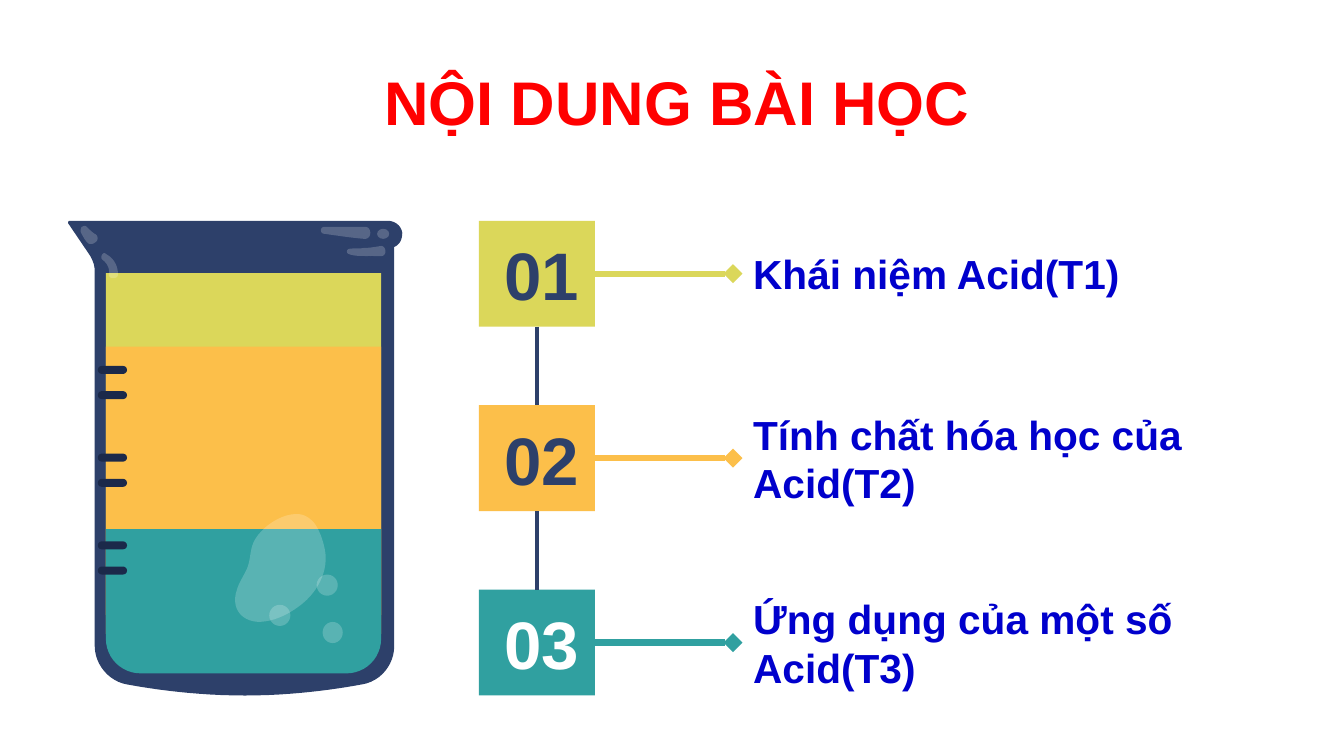
from dataclasses import dataclass

from lxml.etree import SubElement
from pptx import Presentation
from pptx.dml.color import RGBColor
from pptx.enum.shapes import MSO_CONNECTOR, MSO_SHAPE
from pptx.enum.text import MSO_ANCHOR, MSO_AUTO_SIZE, PP_ALIGN
from pptx.oxml.ns import qn
from pptx.shapes.autoshape import Shape
from pptx.shapes.connector import Connector
from pptx.slide import Slide
from pptx.util import Inches, Pt

NAVY, DARK_NAVY, WHITE = "2D406A", "1B294A", "FFFFFF"
LIME, AMBER, TEAL = "DBD75A", "FCBF4A", "30A0A0"
RED, BLUE = "FF0000", "0000CC"
FONT = "Arial"
CURVE_STEPS = 12
ROW_TOP, ROW_PITCH = 2.19, 1.83
SQUARE_LEFT, SQUARE_WIDTH, SQUARE_HEIGHT = 4.75, 1.15, 1.05
LABEL_LEFT, LABEL_HEIGHT = 7.27, 0.88
GLARE_OPACITY = 20

Point = tuple[float, float]


@dataclass
class Lesson:
    number: str
    text: str
    color: str
    number_color: str
    label_width: float


@dataclass
class Outline:
    """A start point, then segments of two numbers (line) or six (curve)."""
    start: Point
    segments: list[tuple[float, ...]]


@dataclass
class Box:
    left: float
    top: float
    width: float
    height: float


LESSONS = [
    Lesson("01", "Khái niệm Acid(T1)", LIME, NAVY, 5.4),
    Lesson("02", "Tính chất hóa học của Acid(T2)", AMBER, NAVY, 5.56),
    Lesson("03", "Ứng dụng của một số Acid(T3)", TEAL, WHITE, 5.4),
]

BEAKER = Outline((0.69, 2.19), [
    (0.68, 2.19, 0.67, 2.21, 0.68, 2.22), (0.89, 2.53),
    (0.92, 2.58, 0.94, 2.63, 0.94, 2.69), (0.94, 6.41),
    (0.94, 6.59, 1.08, 6.76, 1.26, 6.79), (1.53, 6.84, 1.95, 6.9, 2.43, 6.9),
    (2.9, 6.9, 3.32, 6.84, 3.59, 6.79), (3.78, 6.76, 3.91, 6.59, 3.91, 6.41),
    (3.91, 2.45), (3.96, 2.43, 3.99, 2.38, 3.99, 2.31),
    (3.98, 2.24, 3.92, 2.19, 3.84, 2.19),
])
GLARES = [
    Outline((1.04, 2.51), [
        (1.01, 2.51, 0.99, 2.56, 1.02, 2.58), (1.06, 2.61, 1.09, 2.66, 1.08, 2.72),
        (1.08, 2.75, 1.1, 2.76, 1.12, 2.76), (1.15, 2.76, 1.17, 2.75, 1.17, 2.72),
        (1.17, 2.64, 1.13, 2.56, 1.05, 2.52),
    ]),
    Outline((3.78, 2.44), [
        (3.72, 2.45, 3.67, 2.46, 3.61, 2.46), (3.56, 2.47, 3.5, 2.46, 3.46, 2.47),
        (3.43, 2.48, 3.44, 2.52, 3.46, 2.52), (3.5, 2.54, 3.57, 2.54, 3.62, 2.54),
        (3.68, 2.54, 3.73, 2.54, 3.79, 2.54), (3.84, 2.53, 3.83, 2.44, 3.78, 2.44),
    ]),
    Outline((0.84, 2.24), [
        (0.83, 2.24, 0.82, 2.25, 0.81, 2.25), (0.8, 2.27, 0.8, 2.28, 0.8, 2.3),
        (0.82, 2.34, 0.84, 2.38, 0.87, 2.41), (0.88, 2.42, 0.89, 2.42, 0.91, 2.42),
        (0.92, 2.42, 0.94, 2.41, 0.95, 2.4), (0.98, 2.38, 0.97, 2.33, 0.94, 2.32),
        (0.91, 2.3, 0.89, 2.28, 0.87, 2.26), (0.86, 2.25, 0.85, 2.24, 0.84, 2.24),
    ]),
    Outline((3.49, 2.25), [
        (3.22, 2.25), (3.17, 2.25, 3.17, 2.32, 3.22, 2.32),
        (3.36, 2.34, 3.49, 2.36, 3.62, 2.37), (3.69, 2.37, 3.69, 2.25, 3.62, 2.25),
    ]),
    Outline((2.94, 5.1), [
        (2.76, 5.1, 2.54, 5.27, 2.5, 5.42), (2.48, 5.49, 2.48, 5.57, 2.45, 5.64),
        (2.42, 5.71, 2.37, 5.78, 2.35, 5.85), (2.29, 6.02, 2.38, 6.16, 2.56, 6.17),
        (2.73, 6.17, 2.89, 6.08, 3.01, 5.98), (3.14, 5.87, 3.24, 5.7, 3.23, 5.51),
        (3.22, 5.41, 3.18, 5.27, 3.11, 5.18), (3.05, 5.12, 3, 5.1, 2.94, 5.1),
    ]),
]
BUBBLES = [
    Box(3.74, 2.27, 0.12, 0.1), Box(2.67, 6, 0.21, 0.21),
    Box(3.14, 5.7, 0.21, 0.21), Box(3.2, 6.17, 0.2, 0.21),
]


def rgb(color: str) -> RGBColor:
    return RGBColor.from_string(color)


def paint(shape: Shape, color: str, opacity: int = 100) -> None:
    shape.shadow.inherit = False
    shape.line.fill.background()
    shape.fill.solid()
    shape.fill.fore_color.rgb = rgb(color)
    if opacity < 100:
        fill_color = shape.element.spPr.find(f"{qn('a:solidFill')}/{qn('a:srgbClr')}")
        SubElement(fill_color, qn("a:alpha"), val=str(opacity * 1000))


def add_preset(slide: Slide, kind: MSO_SHAPE, box: Box, color: str, opacity: int = 100) -> Shape:
    shape = slide.shapes.add_shape(
        kind, Inches(box.left), Inches(box.top), Inches(box.width), Inches(box.height))
    paint(shape, color, opacity)
    return shape


def trace(outline: Outline) -> list[Point]:
    points = [outline.start]
    for segment in outline.segments:
        if len(segment) == 2:
            points.append(segment)
            continue
        x0, y0 = points[-1]
        x1, y1, x2, y2, x3, y3 = segment
        for step in range(1, CURVE_STEPS + 1):
            t = step / CURVE_STEPS
            a, b, c, d = (1 - t) ** 3, 3 * t * (1 - t) ** 2, 3 * t * t * (1 - t), t ** 3
            points.append((a * x0 + b * x1 + c * x2 + d * x3, a * y0 + b * y1 + c * y2 + d * y3))
    return points


def add_outline(slide: Slide, outline: Outline, color: str, opacity: int = 100) -> None:
    start, *others = [(Inches(x), Inches(y)) for x, y in trace(outline)]
    builder = slide.shapes.build_freeform(*start)
    builder.add_line_segments(others, close=True)
    paint(builder.convert_to_shape(), color, opacity)


def write(shape: Shape, text: str, size: int, color: str, align: PP_ALIGN,
          left: float = 0, margin: float = 0) -> None:
    frame = shape.text_frame
    frame.word_wrap = True
    frame.auto_size = MSO_AUTO_SIZE.NONE
    frame.vertical_anchor = MSO_ANCHOR.MIDDLE
    frame.margin_left = Inches(left)
    frame.margin_top = frame.margin_right = frame.margin_bottom = Inches(margin)
    frame.text = text
    paragraph = frame.paragraphs[0]
    paragraph.alignment = align
    font = paragraph.font
    font.name, font.size, font.bold = FONT, Pt(size), True
    font.color.rgb = rgb(color)


def connect(slide: Slide, begin: tuple[Shape, int], end: tuple[Shape, int],
            color: str, width: float) -> Connector:
    connector = slide.shapes.add_connector(MSO_CONNECTOR.STRAIGHT, 0, 0, 0, 0)
    connector.begin_connect(*begin)
    connector.end_connect(*end)
    connector.line.color.rgb = rgb(color)
    connector.line.width = Pt(width)
    SubElement(connector.element.spPr, qn("a:effectLst"))
    return connector


def draw_beaker(slide: Slide) -> None:
    add_outline(slide, BEAKER, NAVY)
    add_preset(slide, MSO_SHAPE.RECTANGLE, Box(1.05, 2.71, 2.73, 3.58), LIME)
    add_preset(slide, MSO_SHAPE.RECTANGLE, Box(1.05, 3.44, 2.73, 2.66), AMBER)
    liquid = add_preset(slide, MSO_SHAPE.ROUND_2_SAME_RECTANGLE, Box(1.05, 5.25, 2.73, 1.43), TEAL)
    liquid.adjustments[0] = 0.24
    liquid.rotation = 180
    for glare in GLARES:
        add_outline(slide, glare, WHITE, GLARE_OPACITY)
    for bubble in BUBBLES:
        add_preset(slide, MSO_SHAPE.OVAL, bubble, WHITE, GLARE_OPACITY)
    for pair in range(3):
        for offset in (0, 0.25):
            box = Box(0.97, 3.63 + 0.87 * pair + offset, 0.29, 0.08)
            mark = add_preset(slide, MSO_SHAPE.ROUNDED_RECTANGLE, box, DARK_NAVY)
            mark.adjustments[0] = 0.5


def draw_lesson(slide: Slide, lesson: Lesson, top: float) -> Shape:
    square = add_preset(slide, MSO_SHAPE.RECTANGLE,
                        Box(SQUARE_LEFT, top, SQUARE_WIDTH, SQUARE_HEIGHT), lesson.color)
    write(square, lesson.number, 48, lesson.number_color, PP_ALIGN.CENTER, left=0.1)
    label_top = top + (SQUARE_HEIGHT - LABEL_HEIGHT) / 2
    label = add_preset(slide, MSO_SHAPE.RECTANGLE,
                       Box(LABEL_LEFT, label_top, lesson.label_width, LABEL_HEIGHT), WHITE)
    label.fill.background()
    write(label, lesson.text, 29, BLUE, PP_ALIGN.LEFT, left=0.2)
    arrow = connect(slide, (label, 1), (square, 3), lesson.color, 4.5)
    SubElement(arrow.element.spPr.find(qn("a:ln")), qn("a:headEnd"), type="diamond")
    return square


def main() -> None:
    presentation = Presentation()
    presentation.slide_width, presentation.slide_height = Inches(13.33), Inches(7.5)
    slide = presentation.slides.add_slide(presentation.slide_layouts[5])
    title = slide.shapes.title
    title.left, title.top = Inches(3.19), Inches(0.72)
    title.width, title.height = Inches(7.05), Inches(0.57)
    write(title, "NỘI DUNG BÀI HỌC", 44, RED, PP_ALIGN.CENTER, left=0.13, margin=0.13)
    draw_beaker(slide)
    squares = [draw_lesson(slide, lesson, ROW_TOP + ROW_PITCH * row)
               for row, lesson in enumerate(LESSONS)]
    for upper, lower in zip(squares, squares[1:]):
        connect(slide, (upper, 2), (lower, 0), NAVY, 3)
    presentation.save("out.pptx")


if __name__ == "__main__":
    main()
